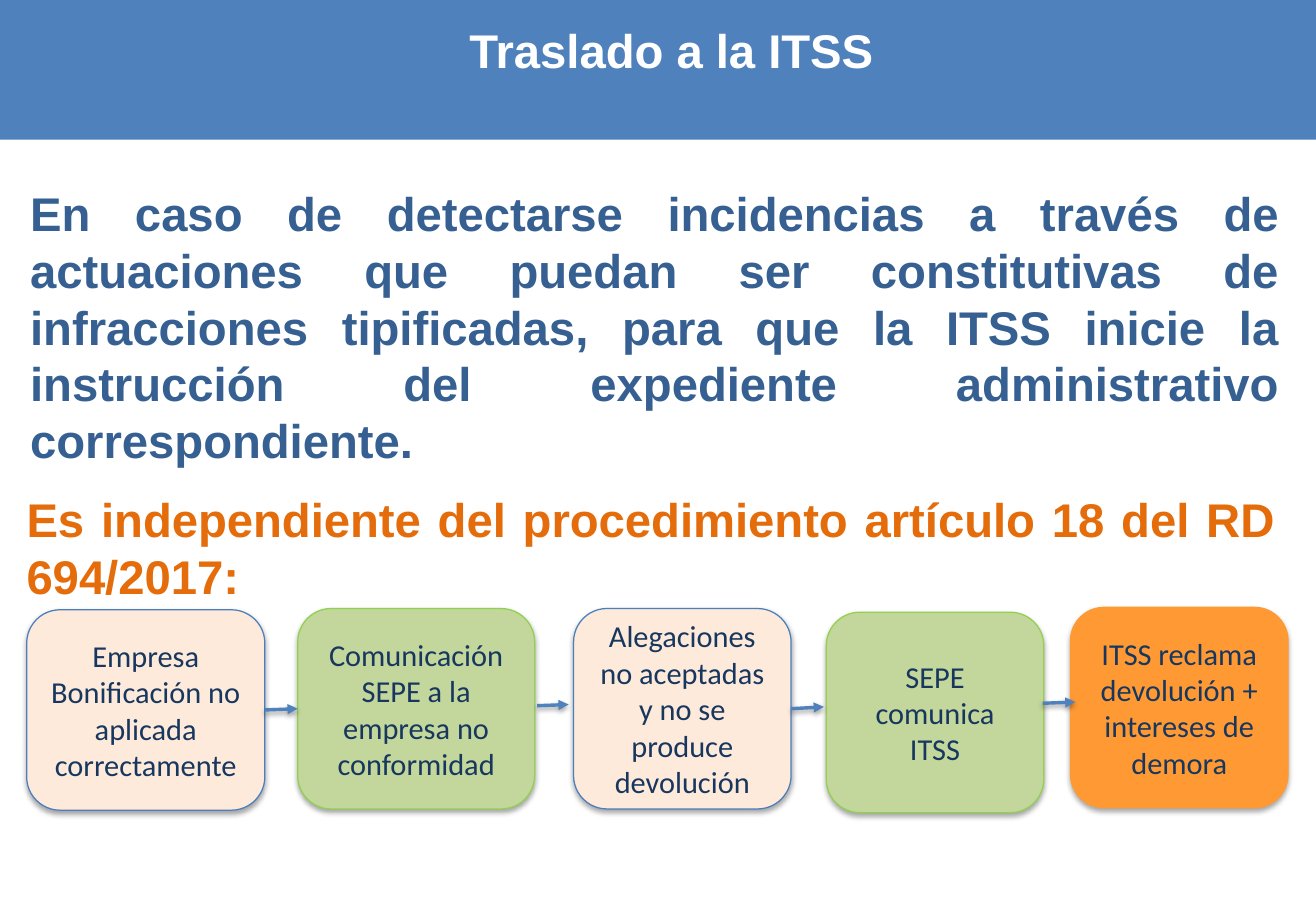
import pptx
import pptx.dml.color
import pptx.enum.shapes
import pptx.enum.text
import pptx.oxml
import pptx.oxml.ns
import pptx.util
from dataclasses import dataclass

PX = 9144  # EMU in one px, 100 px to the inch
SHAPE = pptx.enum.shapes.MSO_SHAPE
ALIGN = pptx.enum.text.PP_ALIGN


@dataclass(frozen=True)
class Theme:
    blue: str = "4F81BD"
    edge: str = "4B7EBC"
    deep: str = "376092"
    navy: str = "17375E"
    white: str = "FFFFFF"
    rust: str = "E46C0A"
    peach: str = "FDEADA"
    sage: str = "C3D69B"
    lime: str = "92D050"
    orange: str = "FF9933"
    head: str = "Arial"
    body: str = "Calibri"
    large: int = 28
    small: int = 18


THEME = Theme()


def px(*nums):
    return [num * PX for num in nums]


def color(code):
    return pptx.dml.color.RGBColor.from_string(code)


def write(frame, text, font, size, code, align, bold=False):
    frame.word_wrap = True
    para = frame.paragraphs[0]
    para.alignment = align
    run = para.add_run()
    run.text = text
    run.font.name = font
    run.font.size = pptx.util.Pt(size)
    run.font.bold = bold
    run.font.color.rgb = color(code)


def shade(props, alpha, dist):
    """Put a soft shadow below a shape or a line."""
    for old in props.findall(pptx.oxml.ns.qn("a:effectLst")):
        props.remove(old)
    props.append(pptx.oxml.parse_xml(
        f'<a:effectLst {pptx.oxml.ns.nsdecls("a")}>'
        f'<a:outerShdw blurRad="40000" dist="{dist}" dir="5400000" rotWithShape="0">'
        f'<a:srgbClr val="000000"><a:alpha val="{alpha}000"/></a:srgbClr>'
        '</a:outerShdw></a:effectLst>'))


def label(slide, area, text, code, align):
    box = slide.shapes.add_textbox(*px(*area))
    write(box.text_frame, text, THEME.head, THEME.large, code, align, True)


def band(slide, area, fill):
    bar = slide.shapes.add_shape(SHAPE.RECTANGLE, *px(*area))
    bar.shadow.inherit = False
    bar.fill.solid()
    bar.fill.fore_color.rgb = color(fill)
    bar.line.fill.background()


def step(slide, area, text, fill, edge):
    box = slide.shapes.add_shape(SHAPE.ROUNDED_RECTANGLE, *px(*area))
    box.fill.solid()
    box.fill.fore_color.rgb = color(fill)
    box.line.color.rgb = color(edge)
    box.line.width = pptx.util.Pt(0.75)
    shade(box._element.spPr, 35, 23000)
    box.text_frame.vertical_anchor = pptx.enum.text.MSO_ANCHOR.MIDDLE
    write(box.text_frame, text, THEME.body, THEME.small, THEME.navy, ALIGN.CENTER)
    return box


def arrow(slide, ends, start=None, stop=None):
    line = slide.shapes.add_connector(
        pptx.enum.shapes.MSO_CONNECTOR.STRAIGHT, *px(*ends))
    if start is not None:
        line.begin_connect(start, 3)
    if stop is not None:
        line.end_connect(stop, 1)
    line.line.color.rgb = color(THEME.blue)
    line.line.width = pptx.util.Pt(2)
    line.line._get_or_add_ln().append(pptx.oxml.parse_xml(
        f'<a:tailEnd {pptx.oxml.ns.nsdecls("a")} type="triangle"/>'))
    shade(line._element.spPr, 38, 20000)


def main():
    deck = pptx.Presentation()
    deck.slide_width, deck.slide_height = px(1083, 750)
    slide = deck.slides.add_slide(deck.slide_layouts[6])

    # Title band and statements
    band(slide, (0, 0, 1083, 115), THEME.blue)
    label(slide, (15, 147, 1047, 246),
          "En caso de detectarse incidencias a través de actuaciones que puedan "
          "ser constitutivas de infracciones tipificadas, para que la ITSS inicie "
          "la instrucción del expediente administrativo correspondiente.",
          THEME.deep, ALIGN.JUSTIFY)
    label(slide, (11, 13, 1083, 57), "Traslado a la ITSS", THEME.white, ALIGN.CENTER)
    label(slide, (12, 399, 1047, 104),
          "Es independiente del procedimiento artículo 18 del RD 694/2017:",
          THEME.rust, ALIGN.JUSTIFY)

    # Steps of the procedure
    peach = (THEME.peach, THEME.edge)
    sage = (THEME.sage, THEME.lime)
    orange = (THEME.orange, THEME.orange)
    steps = [
        (22, 502, 196, "Empresa Bonificación no aplicada correctamente", peach),
        (245, 501, 195, "Comunicación SEPE a la empresa no conformidad", sage),
        (472, 501, 179, "Alegaciones no aceptadas y no se produce devolución", peach),
        (680, 504, 179, "SEPE comunica ITSS", sage),
        (881, 500, 179, "ITSS reclama devolución + intereses de demora", orange),
    ]
    boxes = [step(slide, (left, top, width, 165), text, *look)
             for left, top, width, text, look in steps]

    # Arrows between steps
    arrow(slide, (218, 585, 245, 584), boxes[0], boxes[1])
    arrow(slide, (442, 581, 468, 580))
    arrow(slide, (651, 583, 678, 582), boxes[2])
    arrow(slide, (858, 579, 885, 578))

    deck.save("out.pptx")


if __name__ == "__main__":
    main()
